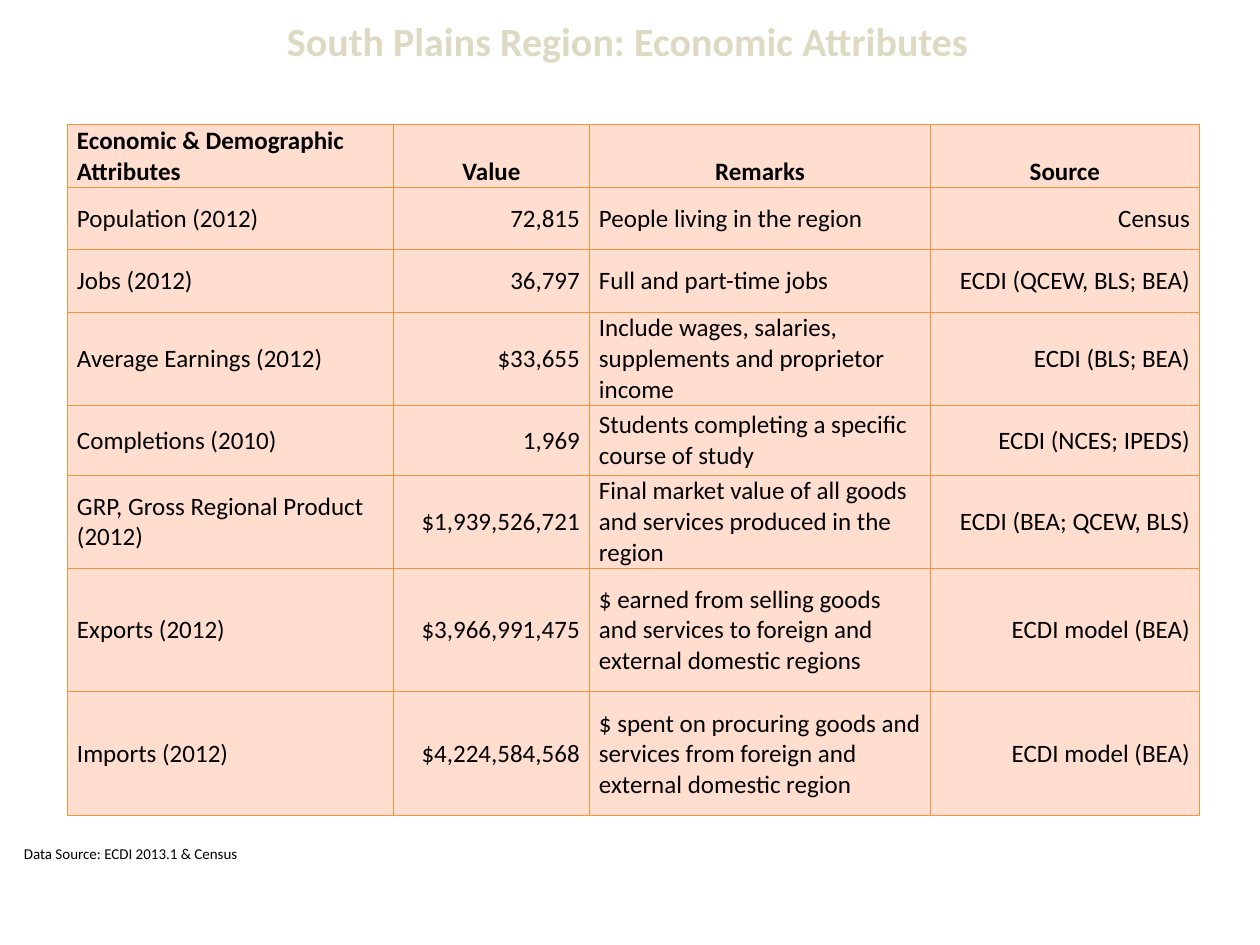
from lxml.etree import SubElement
from pptx import Presentation
from pptx.dml.color import RGBColor
from pptx.enum.text import MSO_ANCHOR as Anchor, PP_ALIGN as Align
from pptx.oxml.ns import qn
from pptx.util import Emu, Pt

PX = 914400 // 90
FONT = "Calibri"
COLORS = {"title": "DDD9C3", "text": "000000", "cell": "FFDDCF", "border": "F69240"}

COLUMN_WIDTHS = [326, 196, 341, 269]
ROW_HEIGHTS = [63, 62, 63, 93, 70, 93, 124, 124]
COLUMN_ALIGNS = [Align.LEFT, Align.RIGHT, Align.LEFT, Align.RIGHT]
ATTRIBUTES = [
    ("Economic & Demographic Attributes", "Value", "Remarks", "Source"),
    ("Population (2012)", "72,815", "People living in the region", "Census"),
    ("Jobs (2012)", "36,797", "Full and part-time jobs", "ECDI (QCEW, BLS; BEA)"),
    ("Average Earnings (2012)", "$33,655",
     "Include wages, salaries, supplements and proprietor income", "ECDI (BLS; BEA)"),
    ("Completions (2010)", "1,969",
     "Students completing a specific course of study", "ECDI (NCES; IPEDS)"),
    ("GRP, Gross Regional Product (2012)", "$1,939,526,721",
     "Final market value of all goods and services produced in the region",
     "ECDI (BEA; QCEW, BLS)"),
    ("Exports (2012)", "$3,966,991,475",
     "$ earned from selling goods and services to foreign and external domestic regions",
     "ECDI model (BEA)"),
    ("Imports (2012)", "$4,224,584,568",
     "$ spent on procuring goods and services from foreign and external domestic region",
     "ECDI model (BEA)"),
]


def px(length):
    return Emu(length * PX)


def write(frame, text, size, color="text", bold=False, align=Align.LEFT):
    frame.text = text
    paragraph = frame.paragraphs[0]
    paragraph.alignment = align
    font = paragraph.runs[0].font
    font.name, font.size, font.bold = FONT, Pt(size), bold
    font.color.rgb = RGBColor.from_string(COLORS[color])


def add_caption(slide, box, text, size, **style):
    frame = slide.shapes.add_textbox(*map(px, box)).text_frame
    frame.word_wrap = True
    write(frame, text, size, **style)


def set_borders(cell):
    properties = cell._tc.get_or_add_tcPr()
    for position, side in enumerate(("lnL", "lnR", "lnT", "lnB")):
        line = properties.makeelement(qn(f"a:{side}"), {"w": str(Pt(0.75))})
        fill = SubElement(line, qn("a:solidFill"))
        SubElement(fill, qn("a:srgbClr"), val=COLORS["border"])
        properties.insert(position, line)  # borders come before the fill


def add_attribute_table(slide, left, top):
    size = (sum(COLUMN_WIDTHS), sum(ROW_HEIGHTS))
    table = slide.shapes.add_table(
        len(ROW_HEIGHTS), len(COLUMN_WIDTHS), *map(px, (left, top, *size))).table
    table.horz_banding = False
    for column, width in zip(table.columns, COLUMN_WIDTHS):
        column.width = px(width)
    for row, height, texts in zip(table.rows, ROW_HEIGHTS, ATTRIBUTES):
        row.height = px(height)
        header = texts is ATTRIBUTES[0]
        for index, (cell, text) in enumerate(zip(row.cells, texts)):
            align = Align.CENTER if header and index else COLUMN_ALIGNS[index]
            write(cell.text_frame, text, 20, bold=header, align=align)
            cell.vertical_anchor = Anchor.BOTTOM if header else Anchor.MIDDLE
            cell.margin_left, cell.margin_right = px(10), px(9)
            cell.margin_top, cell.margin_bottom = px(1), 0
            cell.fill.solid()
            cell.fill.fore_color.rgb = RGBColor.from_string(COLORS["cell"])
            set_borders(cell)


def main():
    prs = Presentation()
    prs.slide_width, prs.slide_height = px(1260), px(945)
    slide = prs.slides.add_slide(prs.slide_layouts[6])

    # Title
    add_caption(slide, (68, 12, 1120, 58), "South Plains Region: Economic Attributes",
                32, color="title", bold=True, align=Align.CENTER)
    # Regional attributes
    add_attribute_table(slide, 67, 124)
    # Source line
    add_caption(slide, (15, 840, 518, 27), "Data Source: ECDI 2013.1 & Census", 12)

    prs.save("out.pptx")


if __name__ == "__main__":
    main()
